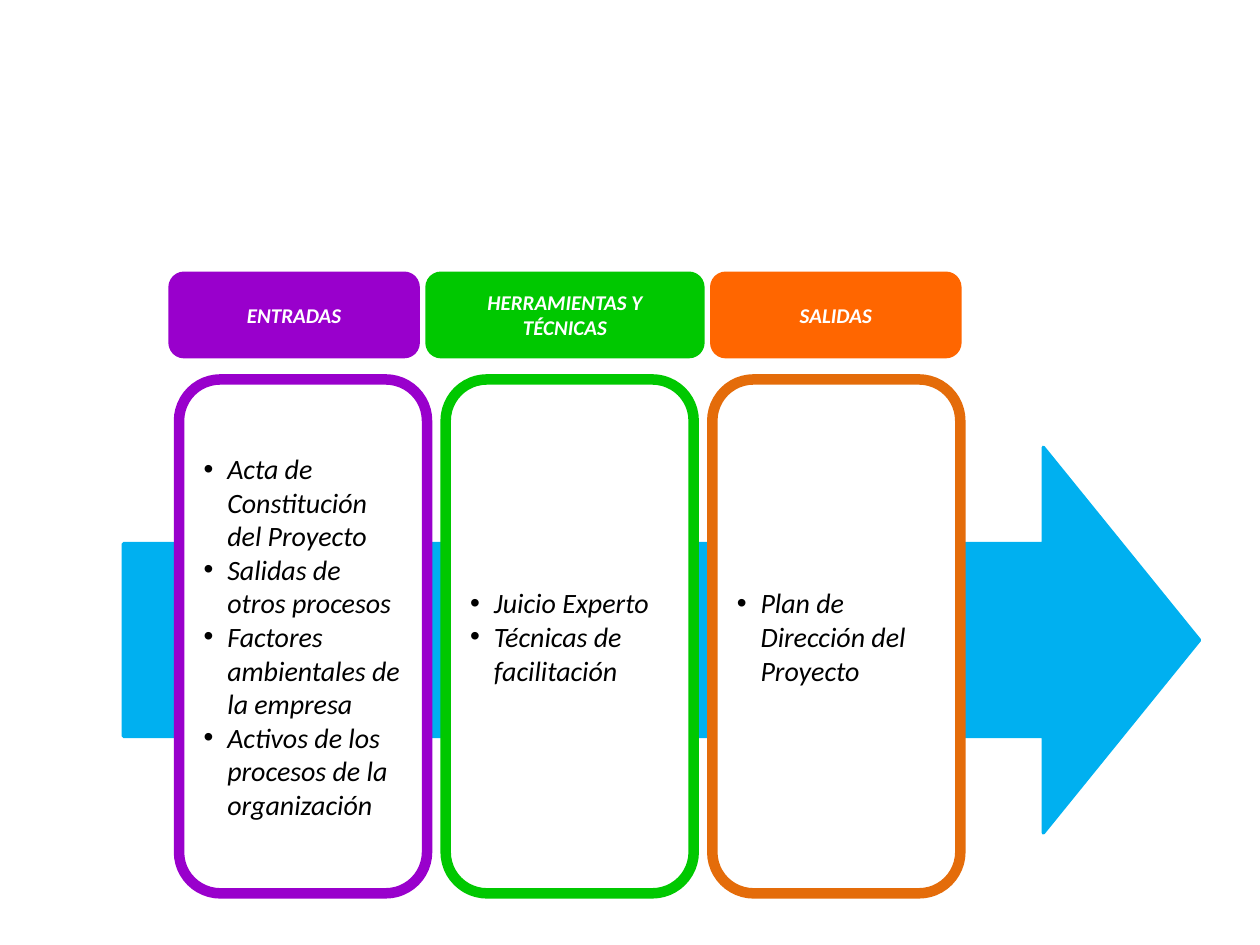
from lxml.etree import SubElement
from pptx import Presentation
from pptx.dml.color import RGBColor
from pptx.enum.shapes import MSO_SHAPE
from pptx.enum.text import MSO_ANCHOR, PP_ALIGN
from pptx.oxml.ns import qn
from pptx.util import Cm, Pt

WHITE = RGBColor(0xFF, 0xFF, 0xFF)
BLACK = RGBColor(0x00, 0x00, 0x00)
SKY = RGBColor(0x00, 0xB0, 0xF0)
PURPLE = RGBColor(0x99, 0x00, 0xCC)
GREEN = RGBColor(0x00, 0xC8, 0x00)
ORANGE = RGBColor(0xFF, 0x66, 0x00)
DARK_ORANGE = RGBColor(0xE4, 0x6C, 0x0A)

HEADING_FONT = {"name": "Calibri", "size": Pt(12), "bold": True, "italic": True}
LIST_FONT = {"name": "Calibri", "size": Pt(16), "bold": False, "italic": True}

STAGES = [
    ("ENTRADAS", 5, PURPLE, PURPLE, [
        "Acta de Constitución del Proyecto",
        "Salidas de otros procesos",
        "Factores ambientales de la empresa",
        "Activos de los procesos de la organización",
    ]),
    ("HERRAMIENTAS Y TÉCNICAS", 5.56, GREEN, GREEN, [
        "Juicio Experto",
        "Técnicas de facilitación",
    ]),
    ("SALIDAS", 5, ORANGE, DARK_ORANGE, ["Plan de Dirección del Proyecto"]),
]


def add_block(shapes, kind, box, fill, line, line_width):
    shape = shapes.add_shape(kind, *(Cm(length) for length in box))
    shape.shadow.inherit = False
    shape.fill.solid()
    shape.fill.fore_color.rgb = fill
    shape.line.color.rgb = line
    shape.line.width = Pt(line_width)
    shape.text_frame.word_wrap = True
    shape.text_frame.vertical_anchor = MSO_ANCHOR.MIDDLE
    return shape


def format_font(paragraph, values, color):
    for attribute, value in values.items():
        setattr(paragraph.font, attribute, value)
    paragraph.font.color.rgb = color


def add_bullet(paragraph):
    properties = paragraph._p.get_or_add_pPr()
    properties.set("marL", str(Cm(0.48)))
    properties.set("indent", str(-Cm(0.48)))
    SubElement(properties, qn("a:buFont"), typeface="Arial")
    SubElement(properties, qn("a:buChar"), char="•")


def add_process_arrow(shapes, box):
    arrow = add_block(shapes, MSO_SHAPE.RIGHT_ARROW, box, SKY, SKY, 2)
    arrow.adjustments[1] = 0.405


def add_list_panels(shapes, box, panel_width):
    left, top, width, height = box
    pitch = (width - panel_width) / (len(STAGES) - 1)
    for index, (_, _, _, border, items) in enumerate(STAGES):
        panel_box = (left + index * pitch, top, panel_width, height)
        panel = add_block(shapes, MSO_SHAPE.ROUNDED_RECTANGLE, panel_box, WHITE, border, 6)
        frame = panel.text_frame
        frame.text = "\n".join(items)
        for paragraph in frame.paragraphs:
            paragraph.alignment = PP_ALIGN.LEFT
            add_bullet(paragraph)
            format_font(paragraph, LIST_FONT, BLACK)


def add_headings(shapes, box):
    left, top, width, height = box
    gap = (width - sum(stage[1] for stage in STAGES)) / (len(STAGES) - 1)
    for title, heading_width, color, _, _ in STAGES:
        heading_box = (left, top, heading_width, height)
        heading = add_block(shapes, MSO_SHAPE.ROUNDED_RECTANGLE, heading_box, color, color, 2)
        heading.text_frame.text = title
        paragraph = heading.text_frame.paragraphs[0]
        paragraph.alignment = PP_ALIGN.CENTER
        format_font(paragraph, HEADING_FONT, WHITE)
        left += heading_width + gap


def main():
    presentation = Presentation()
    presentation.slide_width = Cm(25.4)
    presentation.slide_height = Cm(19.05)
    slide = presentation.slides.add_slide(presentation.slide_layouts[6])
    shapes = slide.shapes.add_group_shape().shapes
    add_process_arrow(shapes, (2.49, 9.02, 21.69, 7.77))
    add_list_panels(shapes, (3.61, 7.65, 15.75, 10.36), 5)
    add_headings(shapes, (3.43, 5.51, 15.92, 1.68))
    presentation.save("out.pptx")


if __name__ == "__main__":
    main()
